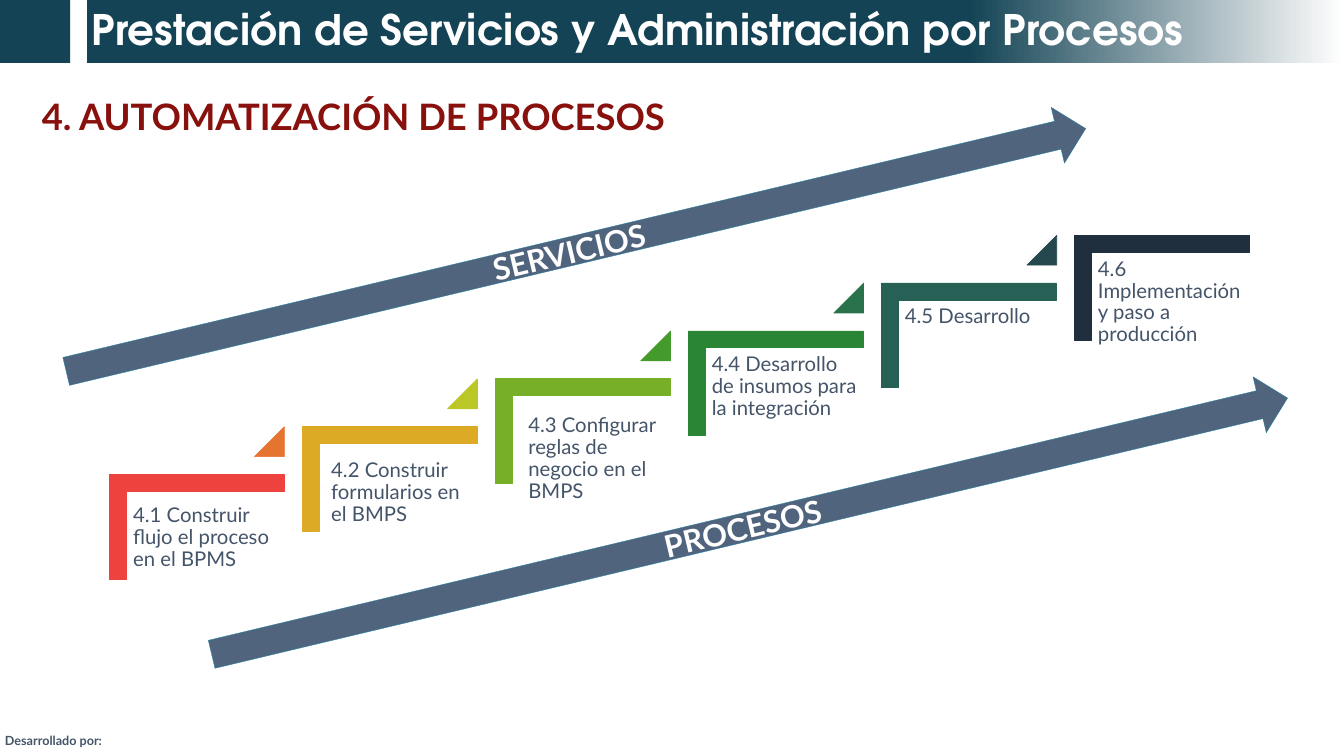
from pptx import Presentation
from pptx.dml.color import RGBColor
from pptx.enum.shapes import MSO_SHAPE
from pptx.enum.text import MSO_ANCHOR, MSO_AUTO_SIZE, PP_ALIGN
from pptx.util import Inches, Pt

COLORS = {"teal": "134354", "white": "FFFFFF", "slate": "445469", "maroon": "88100D",
          "arrow": "51647D", "edge": "2686A7"}
W, H = 26.66, 15
COL, ROW = 3.83, 0.95  # one step of the staircase: right and up

prs = Presentation()
prs.slide_width, prs.slide_height = Inches(W), Inches(H)
s = prs.slides.add_slide(prs.slide_layouts[6])


def add_shape(kind, x, y, w, h, fill, line=None, line_width=1):
    sp = s.shapes.add_shape(kind, Inches(x), Inches(y), Inches(w), Inches(h))
    sp.shadow.inherit = False
    sp.fill.solid()
    sp.fill.fore_color.rgb = RGBColor.from_string(fill)
    if line:
        sp.line.color.rgb = RGBColor.from_string(line)
        sp.line.width = Pt(line_width)
    else:
        sp.line.fill.background()
    return sp


def add_text(sp, text, size, color, bold=False, font="Lato", align=PP_ALIGN.LEFT):
    p = sp.text_frame.paragraphs[0]
    p.alignment = align
    r = p.add_run()
    r.text = text
    r.font.size, r.font.bold, r.font.name = Pt(size), bold, font
    r.font.color.rgb = RGBColor.from_string(COLORS[color])
    return p


# Header band
add_shape(MSO_SHAPE.RECTANGLE, 0, 0, 1.39, 1.25, COLORS["teal"])
title = add_shape(MSO_SHAPE.RECTANGLE, 1.72, 0, W - 1.72, 1.25, COLORS["teal"])
title.fill.gradient()
title.fill.gradient_angle = 0
for stop, (position, color) in zip(title.fill.gradient_stops, [(0.7, "teal"), (1, "white")]):
    stop.position = position
    stop.color.rgb = RGBColor.from_string(COLORS[color])
title.text_frame.vertical_anchor = MSO_ANCHOR.MIDDLE
title.text_frame.word_wrap = True
p = add_text(title, "Prestación de Servicios y Administración por Procesos", 60, "white",
             True, "TeX Gyre Adventor")
p.line_spacing = 0.9

# Section heading and footer
for text, x, y, w, h, size, color in [
    ("4. AUTOMATIZACIÓN DE PROCESOS", 0.73, 1.82, 13.11, 0.98, 52, "maroon"),
    ("Desarrollado por:", 0, 14.5, 2.31, 0.4, 18, "slate"),
]:
    box = s.shapes.add_textbox(Inches(x), Inches(y), Inches(w), Inches(h))
    box.text_frame.word_wrap = False
    box.text_frame.auto_size = MSO_AUTO_SIZE.SHAPE_TO_FIT_TEXT
    add_text(box, text, size, color, True)

# Staircase: text, label offset from its corner, corner colour, triangle colour
steps = [
    ("4.1 Construir flujo el proceso en el BPMS", -0.34, 1.18, "ED423D", "E57430"),
    ("4.2 Construir formularios en el BMPS", -0.24, 1.23, "DDAA25", "BBC726"),
    ("4.3 Configurar reglas de negocio en el BMPS", -0.16, 1.29, "77B028", "449A2A"),
    ("4.4 Desarrollo de insumos para la integración", -0.35, 1.04, "2A8634", "29724B"),
    ("4.5 Desarrollo", -0.35, 1.04, "276055", "24484E"),
    ("4.6 Implementación y paso a producción", -0.35, 1.04, "202F3E", None),
]
for i, (text, dx, dy, corner_color, triangle_color) in enumerate(steps):
    x, y = 2.86 + i * COL, 8.72 - i * ROW
    corner = add_shape(MSO_SHAPE.CORNER, x, y, 2.08, 3.47, corner_color, corner_color)
    corner.rotation = 90
    corner.adjustments[0] = corner.adjustments[1] = 0.161

    label = s.shapes.add_textbox(Inches(x + dx), Inches(y + dy), Inches(3.13), Inches(2.75))
    tf = label.text_frame
    tf.word_wrap = True
    tf.margin_left = tf.margin_right = tf.margin_top = tf.margin_bottom = Inches(0.12)
    add_text(label, text, 29, "slate").line_spacing = 0.9

    if triangle_color:
        triangle = add_shape(MSO_SHAPE.ISOSCELES_TRIANGLE, x + 2.19, y - 0.25, 0.59, 0.59,
                             triangle_color, triangle_color)
        triangle.adjustments[0] = 1

# Rising arrows
for text, x, y, w in [("PROCESOS", 3.9, 9.87, 21.94), ("SERVICIOS", 1.03, 4.39, 20.79)]:
    arrow = add_shape(MSO_SHAPE.RIGHT_ARROW, x, y, w, 1.14, COLORS["arrow"], COLORS["edge"], 0.5)
    arrow.rotation = 346.6
    arrow.text_frame.vertical_anchor = MSO_ANCHOR.MIDDLE
    add_text(arrow, text, 44, "white", True, align=PP_ALIGN.CENTER)

prs.save("out.pptx")
